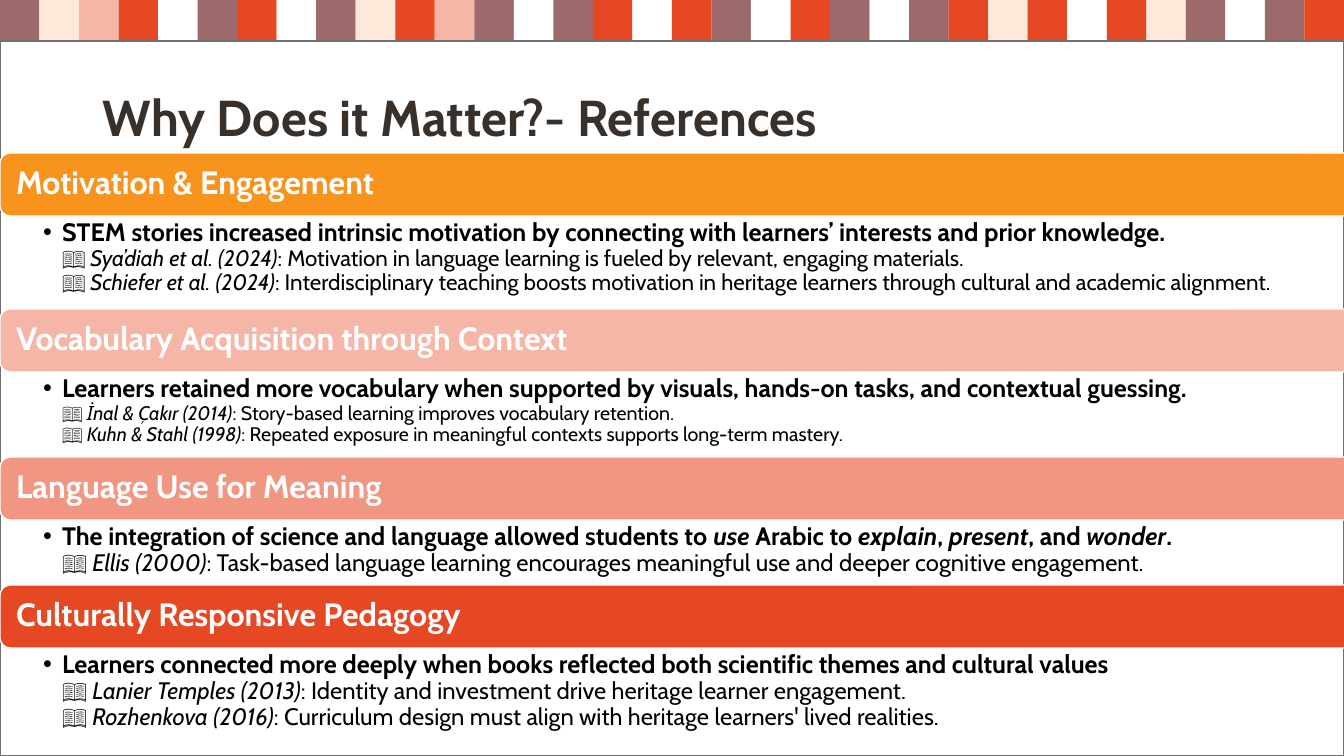
from lxml.etree import SubElement
from pptx import Presentation
from pptx.dml.color import RGBColor
from pptx.enum.shapes import MSO_SHAPE
from pptx.enum.text import MSO_ANCHOR
from pptx.oxml.ns import qn
from pptx.util import Pt

# Content
FONT = "Cabin"
TITLE = "Why Does it Matter?- References"
TILE_COLOURS = {"M": "9C6A6A", "C": "FEE8DA", "P": "F5B5A7", "R": "E64823", "W": "FFFFFF"}
TILES = "MCPRWMRWMCRPMWMRWRMWRMWMRCRWRCMWMR"

# Heading, bar colour, bar top in px, finding, reference size, references; *...* is italic
SECTIONS = [
    ("Motivation & Engagement", "F8931D", 153,
     "STEM stories increased intrinsic motivation by connecting with learners’ interests and prior knowledge.",
     16, ["*Sya’diah et al. (2024)*: Motivation in language learning is fueled by relevant, engaging materials.",
          "*Schiefer et al. (2024)*: Interdisciplinary teaching boosts motivation in heritage learners "
          "through cultural and academic alignment."]),
    ("Vocabulary Acquisition through Context", "F5B6A7", 309,
     "Learners retained more vocabulary when supported by visuals, hands-on tasks, and contextual guessing.",
     14, ["*İnal & Çakır (2014)*: Story-based learning improves vocabulary retention.",
          "*Kuhn & Stahl (1998)*: Repeated exposure in meaningful contexts supports long-term mastery."]),
    ("Language Use for Meaning", "F19682", 457,
     "The integration of science and language allowed students to *use* Arabic to *explain*, *present*, and *wonder*.",
     17, ["*Ellis (2000)*: Task-based language learning encourages meaningful use and deeper cognitive engagement."]),
    ("Culturally Responsive Pedagogy", "E64823", 585,
     "Learners connected more deeply when books reflected both scientific themes and cultural values",
     17, ["*Lanier Temples (2013)*: Identity and investment drive heritage learner engagement.",
          "*Rozhenkova (2016)*: Curriculum design must align with heritage learners' lived realities."]),
]

# Lengths in px
WIDTH, HEIGHT = 1344, 756
EMU_PER_PX = 12192000 / WIDTH
TILE_HEIGHT, PANEL_TOP = 40, 41
BAR_WIDTH, BAR_HEIGHT, BODY_OFFSET = 1363, 63, 64
BODY_BOTTOM = 744


def px(length):
    return round(length * EMU_PER_PX)


def colour(value):
    return RGBColor.from_string(value)


def add_block(page, kind, left, top, width, height, fill, line=None):
    block = page.shapes.add_shape(kind, px(left), px(top), px(width), px(height))
    block.shadow.inherit = False
    block.fill.solid()
    block.fill.fore_color.rgb = colour(fill)
    if line:
        block.line.color.rgb = colour(line)
        block.line.width = Pt(1)
    else:
        block.line.fill.background()
    return block


def set_frame(box, anchor, left, top, right, bottom):
    frame = box.text_frame
    frame.word_wrap = True
    frame.vertical_anchor = anchor
    frame.margin_left, frame.margin_top = px(left), px(top)
    frame.margin_right, frame.margin_bottom = px(right), px(bottom)
    return frame.paragraphs[0]


def style(font, size, ink, bold):
    font.name, font.size, font.bold = FONT, Pt(size), bold
    font.color.rgb = colour(ink)


def add_heading(box, text, size, ink, spacing, anchor, inset):
    para = set_frame(box, anchor, inset, 5, inset, 5)
    para.text = text
    para.line_spacing = spacing
    style(para.font, size, ink, True)


def add_marked(para, text, size, bold):
    for index, part in enumerate(text.split("*")):
        if part:
            span = para.add_run()
            span.text = part
            style(span.font, size, "000000", bold)
            span.font.italic = index % 2 == 1


deck = Presentation()
deck.slide_width, deck.slide_height = px(WIDTH), px(HEIGHT)
page = deck.slides.add_slide(deck.slide_layouts[6])
page.background.fill.solid()
page.background.fill.fore_color.rgb = colour("FEE8DA")

# Tile strip and white panel
tile_width = WIDTH / len(TILES)
for index, key in enumerate(TILES):
    add_block(page, MSO_SHAPE.RECTANGLE, index * tile_width, 0, tile_width, TILE_HEIGHT, TILE_COLOURS[key])
add_block(page, MSO_SHAPE.RECTANGLE, 0, PANEL_TOP, WIDTH, HEIGHT - PANEL_TOP, "FFFFFF", "707070")

# Title
title = page.shapes.add_textbox(px(93), px(61), px(1159), px(90))
add_heading(title, TITLE, 36, "39302A", 0.8, MSO_ANCHOR.BOTTOM, 10)

# Sections: a coloured bar with findings and references below it
body_ends = [section[2] for section in SECTIONS[1:]] + [BODY_BOTTOM]
for (heading, fill, top, finding, size, references), end in zip(SECTIONS, body_ends):
    bar = add_block(page, MSO_SHAPE.ROUNDED_RECTANGLE, 0, top, BAR_WIDTH, BAR_HEIGHT, fill, "FFFFFF")
    add_heading(bar, heading, 23, "FFFFFF", 0.9, MSO_ANCHOR.MIDDLE, 13)
    bar.text_frame.paragraphs[0].alignment = 1

    body_top = top + BODY_OFFSET
    body = page.shapes.add_textbox(0, px(body_top), px(BAR_WIDTH), px(end - body_top))
    para = set_frame(body, MSO_ANCHOR.TOP, 43, 3, 14, 3)
    para.line_spacing = 0.9
    properties = para._p.get_or_add_pPr()
    properties.set("marL", str(px(19)))
    properties.set("indent", str(px(-19)))
    SubElement(properties, qn("a:buFont"), typeface="Arial")
    SubElement(properties, qn("a:buChar"), char="•")
    style(para.font, size, "000000", False)
    add_marked(para, finding, 18, True)
    for reference in references:
        para.add_line_break()
        add_marked(para, "📖 " + reference, size, False)

deck.save("out.pptx")
